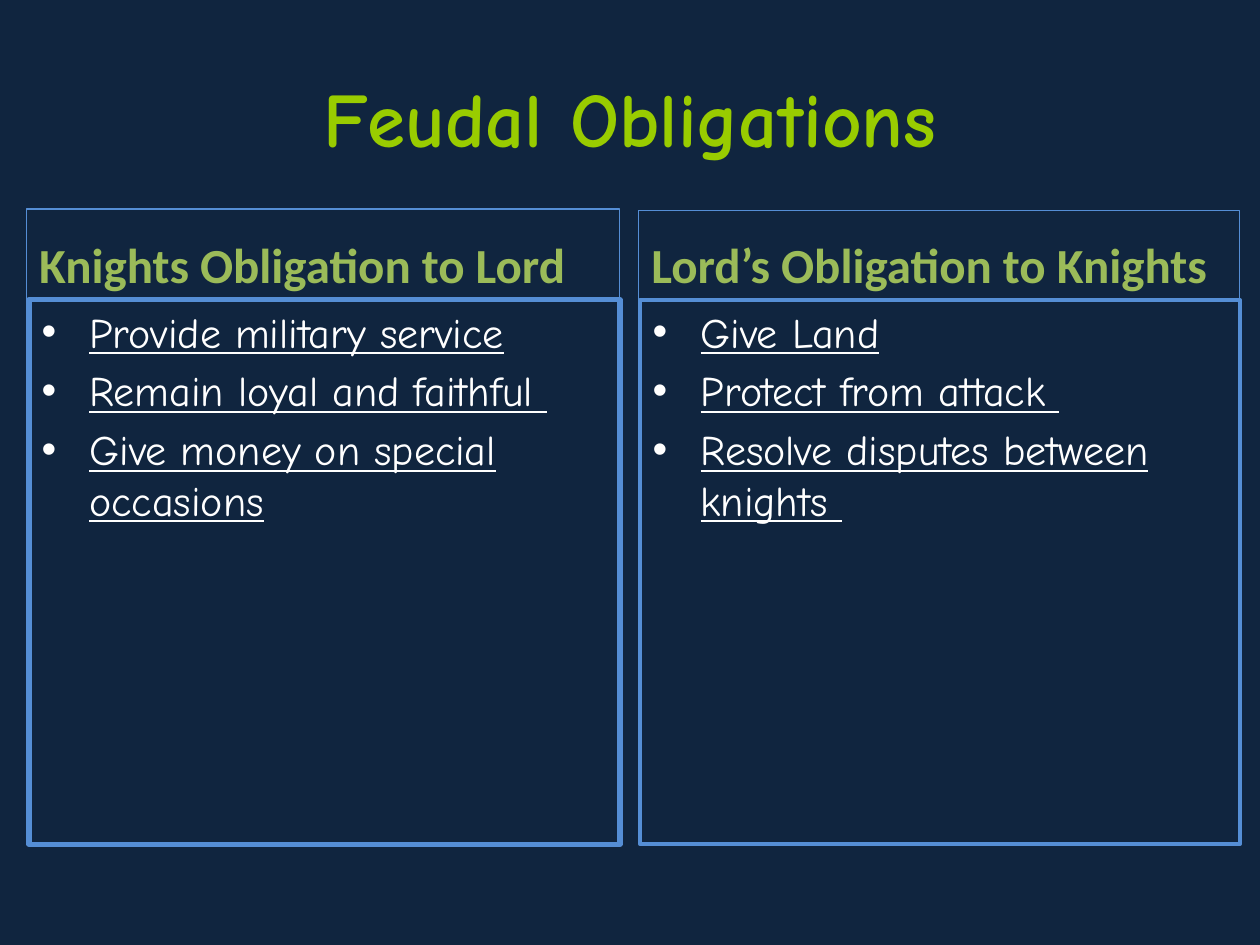
"""Build the Feudal Obligations comparison slide."""
from dataclasses import dataclass

from lxml import etree
from pptx import Presentation
from pptx import util as u
from pptx.dml.color import RGBColor
from pptx.enum import text
from pptx.oxml import ns

TITLE = "Feudal Obligations"
COLUMNS = [
    {
        "heading": "Knights Obligation to Lord",
        "duties": ["Provide military service", "Remain loyal and faithful ",
                   "Give money on special occasions"],
        "heading_start": (0.21, 1.66), "list_left": 0.23, "right": 4.92,
        "list_line": 3,
    },
    {
        "heading": "Lord’s Obligation to Knights",
        "duties": ["Give Land", "Protect from attack ",
                   "Resolve disputes between knights "],
        "heading_start": (5.07, 1.67), "list_left": 5.08, "right": 9.84,
        "list_line": 2.25,
    },
]
SEAM, BOTTOM = 2.38, 6.7
INDENT = u.Inches(0.38)


@dataclass(frozen=True)
class Theme:
    """Colours and type styles for the slide."""
    background = "10253F"
    border = "558ED5"
    bullet = "FFFFFF"
    heading_line = 0.75
    title = {"name": "Comic Neue", "size": u.Pt(44), "bold": True, "color": "99CC00"}
    heading = {"name": "Calibri", "size": u.Pt(28), "bold": True, "color": "9BBB59"}
    duty = {"name": "Comic Neue", "size": u.Pt(24), "bold": False,
            "underline": True, "color": bullet}


def place(box, left, top, right, bottom, anchor):
    """Set a placeholder's edges and text frame."""
    edges = {"left": left, "top": top, "width": right - left, "height": bottom - top}
    for name, inches in edges.items():
        setattr(box, name, u.Inches(inches))
    frame = {"word_wrap": True, "auto_size": text.MSO_AUTO_SIZE.NONE,
             "vertical_anchor": anchor}
    for name, value in frame.items():
        setattr(box.text_frame, name, value)


def outline(box, points):
    """Draw a border around a box."""
    box.line.color.rgb = RGBColor.from_string(Theme.border)
    box.line.width = u.Pt(points)


def write(para, words, style):
    """Add one styled run to a paragraph."""
    span = para.add_run()
    span.text = words
    for name, value in style.items():
        if name == "color":
            span.font.color.rgb = RGBColor.from_string(value)
        else:
            setattr(span.font, name, value)


def add_bullet(para):
    """Give a paragraph a hanging bullet."""
    props = para._p.get_or_add_pPr()
    props.set("marL", str(INDENT))
    props.set("indent", str(-INDENT))
    color = etree.SubElement(props, ns.qn("a:buClr"))
    etree.SubElement(color, ns.qn("a:srgbClr"), val=Theme.bullet)
    etree.SubElement(props, ns.qn("a:buFont"), typeface="Arial")
    etree.SubElement(props, ns.qn("a:buChar"), char="•")


def fill_column(column, heading, duties):
    """Fill one heading and the list below it."""
    anchors = text.MSO_ANCHOR
    place(heading, *column["heading_start"], column["right"], SEAM, anchors.BOTTOM)
    outline(heading, Theme.heading_line)
    write(heading.text_frame.paragraphs[0], column["heading"], Theme.heading)

    place(duties, column["list_left"], SEAM, column["right"], BOTTOM, anchors.TOP)
    outline(duties, column["list_line"])
    for row, words in enumerate(column["duties"]):
        frame = duties.text_frame
        para = frame.add_paragraph() if row else frame.paragraphs[0]
        para.space_before = u.Pt(4.8 if row else 0)
        add_bullet(para)
        write(para, words, Theme.duty)


def main():
    """Create and save the deck."""
    deck = Presentation()
    deck.slide_width, deck.slide_height = u.Inches(10), u.Inches(7.5)
    page = deck.slides.add_slide(deck.slide_layouts.get_by_name("Comparison"))
    page.background.fill.solid()
    page.background.fill.fore_color.rgb = RGBColor.from_string(Theme.background)

    title, *boxes = page.placeholders
    place(title, 0.5, 0.3, 9.5, 1.55, text.MSO_ANCHOR.MIDDLE)
    title.text_frame.paragraphs[0].alignment = text.PP_ALIGN.CENTER
    write(title.text_frame.paragraphs[0], TITLE, Theme.title)
    for column, heading, duties in zip(COLUMNS, boxes[::2], boxes[1::2]):
        fill_column(column, heading, duties)
    deck.save("out.pptx")


if __name__ == "__main__":
    main()
